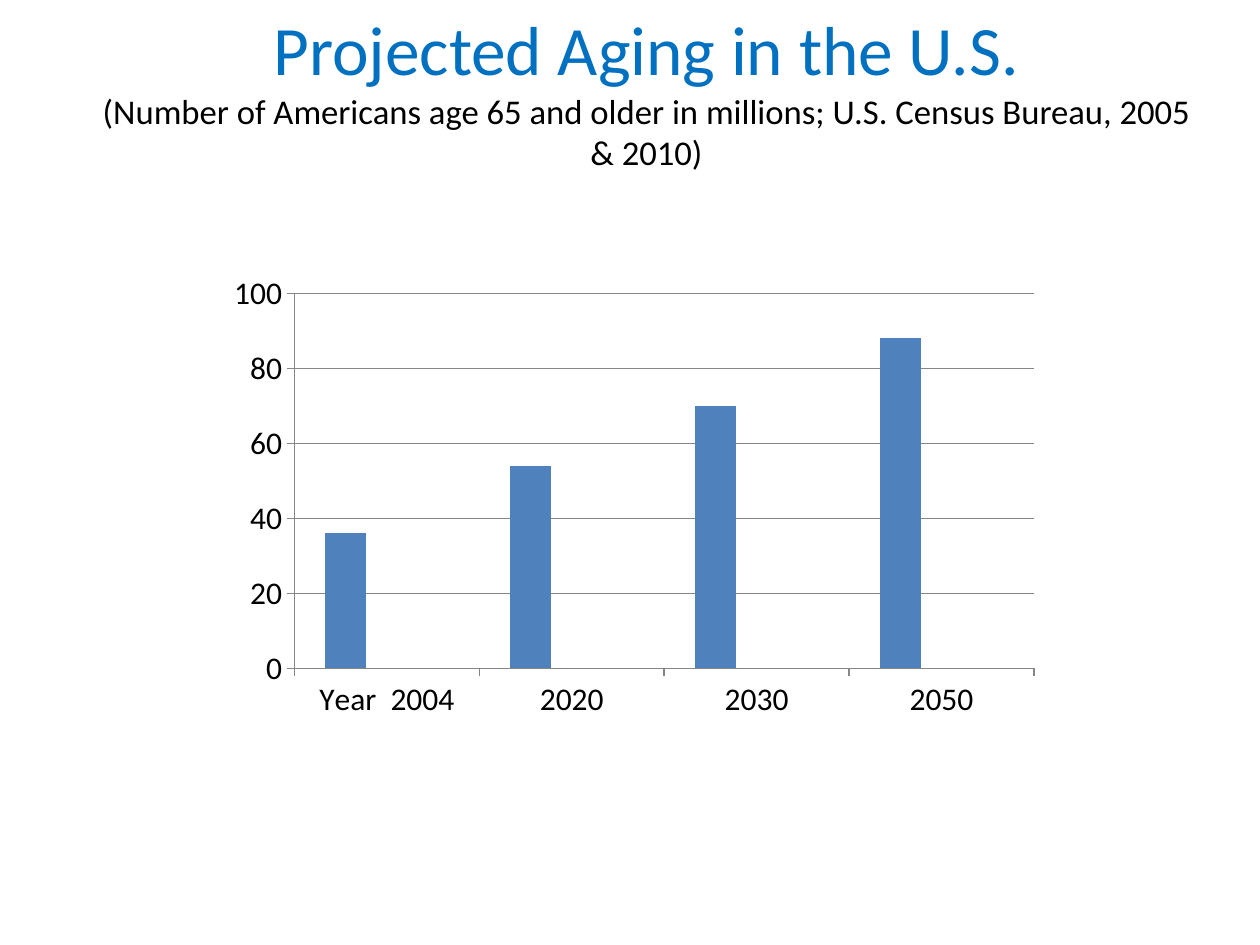
from lxml.etree import SubElement
from pptx import Presentation
from pptx.chart.data import CategoryChartData
from pptx.dml.color import RGBColor
from pptx.enum.chart import XL_CHART_TYPE, XL_TICK_MARK
from pptx.enum.text import MSO_ANCHOR, PP_ALIGN
from pptx.oxml.ns import qn
from pptx.util import Inches, Pt

FONT = "Calibri"
COLORS = {
    "title": "0070C0",
    "text": "000000",
    "axis": "868686",
    "Series 1": "4F81BD",
    "Series 2": "C0504D",
    "Series 3": "9BBB59",
}
YEARS = ["Year  2004", "2020", "2030", "2050"]
MILLIONS = {
    "Series 1": [36, 54, 70, 88],
    "Series 2": [None] * 4,
    "Series 3": [None] * 4,
}
PLOT_AREA = {"x": 0.1, "y": 0.18, "w": 0.88, "h": 0.67}


def rgb(name):
    return RGBColor.from_string(COLORS[name])


def style_font(font, size, color):
    font.name = FONT
    font.size = Pt(size)
    font.color.rgb = rgb(color)


def add_heading(slide, title, subtitle):
    box = slide.shapes.add_textbox(Inches(0.67), Inches(0.17), Inches(8.92), Inches(1.08))
    frame = box.text_frame
    frame.word_wrap = True
    frame.vertical_anchor = MSO_ANCHOR.MIDDLE
    heading = frame.paragraphs[0]
    heading.alignment = PP_ALIGN.CENTER
    title_run = heading.add_run()
    title_run.text = title
    style_font(title_run.font, 39.6, "title")
    heading.add_line_break()
    subtitle_run = heading.add_run()
    subtitle_run.text = subtitle
    style_font(subtitle_run.font, 19.8, "text")


def style_axis(axis):
    axis.major_tick_mark = XL_TICK_MARK.OUTSIDE
    axis.minor_tick_mark = XL_TICK_MARK.NONE
    axis.format.line.color.rgb = rgb("axis")
    axis.format.line.width = Pt(0.75)


def place_plot_area(chart):
    """Fix the inner plot area as fractions of the chart frame."""
    plot_area = chart.element.find(".//" + qn("c:plotArea"))
    layout = plot_area.find(qn("c:layout"))
    if layout is None:
        layout = SubElement(plot_area, qn("c:layout"))
        plot_area.insert(0, layout)
    manual = SubElement(layout, qn("c:manualLayout"))
    settings = {"layoutTarget": "inner", "xMode": "edge", "yMode": "edge", **PLOT_AREA}
    for tag, value in settings.items():
        SubElement(manual, qn(f"c:{tag}")).set("val", str(value))


def add_population_chart(slide):
    population = CategoryChartData()
    population.categories = YEARS
    for name, values in MILLIONS.items():
        population.add_series(name, values)
    chart = slide.shapes.add_chart(
        XL_CHART_TYPE.COLUMN_CLUSTERED,
        Inches(1.67), Inches(1.53), Inches(6.67), Inches(4.44), population,
    ).chart
    chart.has_legend = False
    chart.has_title = False
    style_font(chart.font, 18, "text")

    # Columns
    columns = chart.plots[0]
    columns.vary_by_categories = False
    columns.gap_width = 150
    columns.overlap = 0
    for series in columns.series:
        series.format.fill.solid()
        series.format.fill.fore_color.rgb = rgb(series.name)

    # Axes and gridlines
    style_axis(chart.category_axis)
    style_axis(chart.value_axis)
    millions_axis = chart.value_axis
    millions_axis.minimum_scale = 0
    millions_axis.maximum_scale = 100
    millions_axis.major_unit = 20
    millions_axis.has_major_gridlines = True
    gridline = millions_axis.major_gridlines.format.line
    gridline.color.rgb = rgb("axis")
    gridline.width = Pt(0.75)
    place_plot_area(chart)


def main():
    presentation = Presentation()
    presentation.slide_width = Inches(10)
    presentation.slide_height = Inches(7.5)
    slide = presentation.slides.add_slide(presentation.slide_layouts[6])
    add_heading(
        slide,
        "Projected Aging in the U.S.",
        "(Number of Americans age 65 and older in millions; "
        "U.S. Census Bureau, 2005 & 2010)",
    )
    add_population_chart(slide)
    presentation.save("out.pptx")


if __name__ == "__main__":
    main()
